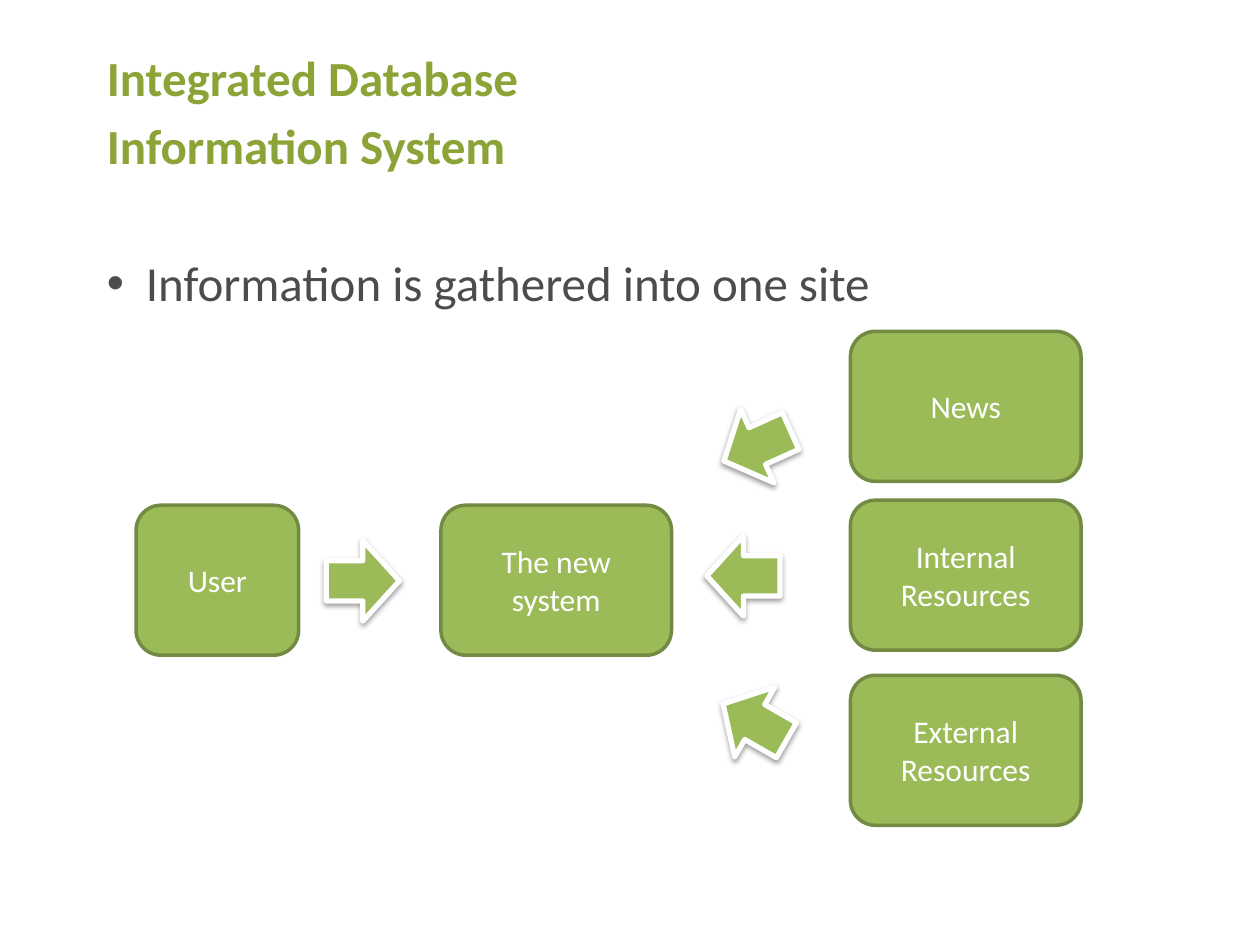
from lxml.etree import SubElement
from pptx import Presentation
from pptx.dml.color import RGBColor
from pptx.enum.shapes import MSO_SHAPE
from pptx.enum.text import MSO_ANCHOR, PP_ALIGN
from pptx.oxml.ns import qn
from pptx.util import Inches, Pt

COLORS = {"heading": "8CA338", "body": "4C4C4C", "fill": "9BBB59",
          "border": "738A42", "white": "FFFFFF", "shadow": "000000"}
FONT = "Calibri"
HEADINGS = ["Integrated Database", "Information System"]
BULLET = "Information is gathered into one site"
BOX_HEIGHT = 1.19
WIDE, NARROW = 1.83, 1.29
COLUMNS = {"user": 1.08, "system": 3.5, "sources": 6.75}
MIDDLE_ROW = 4.01
BOXES = [
    ("The new system", COLUMNS["system"], MIDDLE_ROW, WIDE),
    ("User", COLUMNS["user"], MIDDLE_ROW, NARROW),
    ("News", COLUMNS["sources"], 2.63, WIDE),
    ("Internal Resources", COLUMNS["sources"], 3.97, WIDE),
    ("External Resources", COLUMNS["sources"], 5.36, WIDE),
]
ARROW_SIZE = (0.58, 0.64)
ARROWS = [(2.59, 4.29, 0), (5.72, 3.22, 155.7), (5.61, 4.25, 180), (5.7, 5.41, 209.8)]


def color(name):
    return RGBColor.from_string(COLORS[name])


def style_font(paragraph, size, name, bold=False):
    font = paragraph.font
    font.name, font.size, font.bold = FONT, Pt(size), bold
    font.color.rgb = color(name)


def add_block(slide, preset, bounds, border, width):
    block = slide.shapes.add_shape(preset, *map(Inches, bounds))
    block.shadow.inherit = False
    block.fill.solid()
    block.fill.fore_color.rgb = color("fill")
    block.line.color.rgb = color(border)
    block.line.width = Pt(width)
    return block


def add_intro(slide):
    frame = slide.shapes.add_textbox(*map(Inches, (0.25, 0.33, 9, 6.28))).text_frame
    frame.word_wrap = True
    lines = [(text, "heading", True, 5) for text in HEADINGS]
    lines.append((BULLET, "body", False, 45))
    for index, (text, shade, bold, gap) in enumerate(lines):
        paragraph = frame.paragraphs[0] if index == 0 else frame.add_paragraph()
        paragraph.text = text
        paragraph.space_before = Pt(gap)
        style_font(paragraph, 28, shade, bold)
        properties = paragraph._p.get_or_add_pPr()
        properties.set("marL", str(Inches(0.81)))
        properties.set("indent", str(Inches(-0.31)))
        if text == BULLET:
            bullet_font = SubElement(properties, qn("a:buFont"), typeface="Arial")
            bullet = SubElement(properties, qn("a:buChar"), char="•")
            properties.find(qn("a:defRPr")).addprevious(bullet_font)
            bullet_font.addnext(bullet)


def add_box(slide, label, left, top, width):
    box = add_block(slide, MSO_SHAPE.ROUNDED_RECTANGLE,
                    (left, top, width, BOX_HEIGHT), "border", 2)
    frame = box.text_frame
    frame.word_wrap = True
    frame.vertical_anchor = MSO_ANCHOR.MIDDLE
    paragraph = frame.paragraphs[0]
    paragraph.text = label
    paragraph.alignment = PP_ALIGN.CENTER
    style_font(paragraph, 18, "white")


def add_arrow(slide, left, top, angle):
    arrow = add_block(slide, MSO_SHAPE.RIGHT_ARROW, (left, top, *ARROW_SIZE), "white", 3)
    arrow.rotation = angle
    effects = arrow._element.spPr.find(qn("a:effectLst"))
    shadow = SubElement(effects, qn("a:outerShdw"), blurRad=str(Pt(3.1)),
                        dist=str(Pt(1.6)), dir="5400000", rotWithShape="0")
    tint = SubElement(shadow, qn("a:srgbClr"), val=COLORS["shadow"])
    SubElement(tint, qn("a:alpha"), val="38000")


def main():
    """Build the integrated database information system slide."""
    deck = Presentation()
    deck.slide_width, deck.slide_height = Inches(10), Inches(7.5)
    slide = deck.slides.add_slide(deck.slide_layouts[6])
    add_intro(slide)
    for box in BOXES:
        add_box(slide, *box)
    for arrow in ARROWS:
        add_arrow(slide, *arrow)
    deck.save("out.pptx")


if __name__ == "__main__":
    main()
